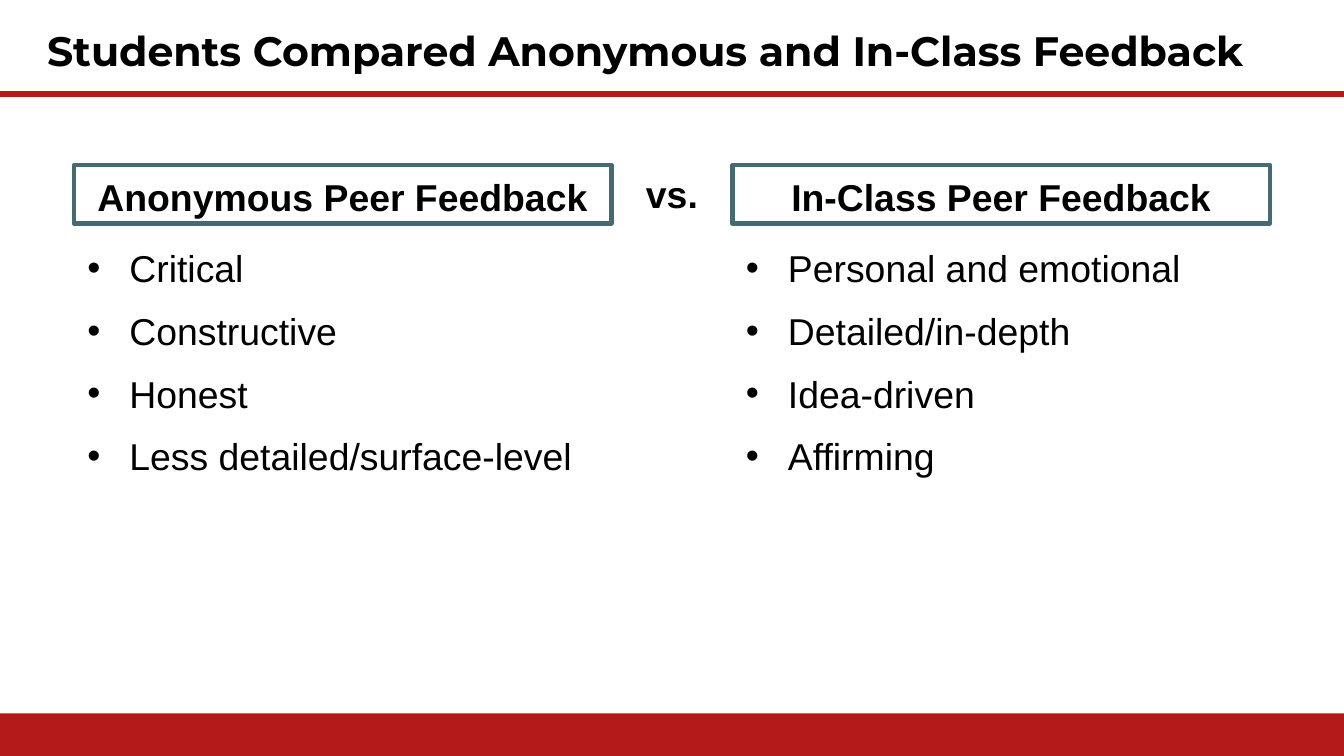
from lxml import etree
from pptx import Presentation
from pptx.dml.color import RGBColor
from pptx.enum.shapes import MSO_CONNECTOR, MSO_SHAPE
from pptx.enum.text import MSO_ANCHOR, MSO_AUTO_SIZE, PP_ALIGN
from pptx.oxml.ns import qn
from pptx.util import Pt

RECTANGLE, STRAIGHT = MSO_SHAPE.RECTANGLE, MSO_CONNECTOR.STRAIGHT
TOP, MIDDLE = MSO_ANCHOR.TOP, MSO_ANCHOR.MIDDLE
LEFT, CENTER = PP_ALIGN.LEFT, PP_ALIGN.CENTER
NO_AUTOFIT = MSO_AUTO_SIZE.NONE

TITLE = "Students Compared Anonymous and In-Class Feedback"
VERSUS = "vs."
COLUMNS = [
    ("Anonymous Peer Feedback",
     ["Critical", "Constructive", "Honest", "Less detailed/surface-level"]),
    ("In-Class Peer Feedback",
     ["Personal and emotional", "Detailed/in-depth", "Idea-driven", "Affirming"]),
]

RED, TEAL, BLACK = "B31B1B", "476971", "000000"
SLIDE_W, SLIDE_H = 720, 405
FOOTER_H = 22.8
RULE_Y = 50.4
COLUMN_W, COLUMN_GAP = 288, 64.8
COLUMN_X = (SLIDE_W - 2 * COLUMN_W - COLUMN_GAP) / 2
HEADING_Y, HEADING_H = 88.3, 31.5
LIST_Y, LIST_H = 126, 165
VERSUS_W = 50.4
BULLET_INDENT = 22.5


def color(hex_code):
    return RGBColor.from_string(hex_code)


def place(shape, left, top, width, height):
    shape.left, shape.top = Pt(left), Pt(top)
    shape.width, shape.height = Pt(width), Pt(height)


def write(shape, lines, size=20, font="Arial", bold=False, align=LEFT,
          anchor=TOP, line_spacing=1.0, space_after=0):
    frame = shape.text_frame
    frame.text = "\n".join(lines)
    frame.word_wrap = True
    frame.auto_size = NO_AUTOFIT
    frame.vertical_anchor = anchor
    for paragraph in frame.paragraphs:
        paragraph.alignment = align
        paragraph.line_spacing = line_spacing
        paragraph.space_before = Pt(0)
        paragraph.space_after = Pt(space_after)
        for run in paragraph.runs:
            run.font.size, run.font.name, run.font.bold = Pt(size), font, bold
            run.font.color.rgb = color(BLACK)


def add_bullets(shape):
    for paragraph in shape.text_frame.paragraphs:
        properties = paragraph._p.get_or_add_pPr()
        properties.set("marL", str(Pt(BULLET_INDENT)))
        properties.set("indent", str(-Pt(BULLET_INDENT)))
        bullet_color = etree.SubElement(properties, qn("a:buClr"))
        etree.SubElement(bullet_color, qn("a:srgbClr"), val=BLACK)
        etree.SubElement(properties, qn("a:buFont"), typeface="Arial")
        etree.SubElement(properties, qn("a:buChar"), char="•")


def add_rectangle(left, top, width, height):
    rectangle = slide.shapes.add_shape(
        RECTANGLE, Pt(left), Pt(top), Pt(width), Pt(height))
    rectangle.shadow.inherit = False
    return rectangle


prs = Presentation()
prs.slide_width, prs.slide_height = Pt(SLIDE_W), Pt(SLIDE_H)
slide = prs.slides.add_slide(prs.slide_layouts.get_by_name("Two Content"))
title, *lists = slide.placeholders

footer = add_rectangle(0, SLIDE_H - FOOTER_H, SLIDE_W, FOOTER_H)
footer.fill.solid()
footer.fill.fore_color.rgb = color(RED)
footer.line.fill.background()

rule = slide.shapes.add_connector(
    STRAIGHT, Pt(SLIDE_W), Pt(RULE_Y), Pt(0), Pt(RULE_Y))
rule.line.color.rgb = color(RED)
rule.line.width = Pt(3)
etree.SubElement(rule._element.spPr, qn("a:effectLst"))

place(title, 18, 4.3, 671, 45.4)
write(title, [TITLE], size=22, font="Montserrat", bold=True, anchor=MIDDLE)

for i, ((heading, points), point_list) in enumerate(zip(COLUMNS, lists)):
    left = COLUMN_X + i * (COLUMN_W + COLUMN_GAP)
    heading_box = add_rectangle(left, HEADING_Y, COLUMN_W, HEADING_H)
    heading_box.fill.background()
    heading_box.line.color.rgb = color(TEAL)
    heading_box.line.width = Pt(2.25)
    write(heading_box, [heading], bold=True, align=CENTER,
          line_spacing=1.07, space_after=8)

    place(point_list, left, LIST_Y, COLUMN_W, LIST_H)
    write(point_list, points, line_spacing=1.07, space_after=8)
    add_bullets(point_list)

versus = slide.shapes.add_textbox(
    Pt((SLIDE_W - VERSUS_W) / 2), Pt(HEADING_Y), Pt(VERSUS_W), Pt(HEADING_H))
write(versus, [VERSUS], bold=True, align=CENTER)

prs.save("out.pptx")
